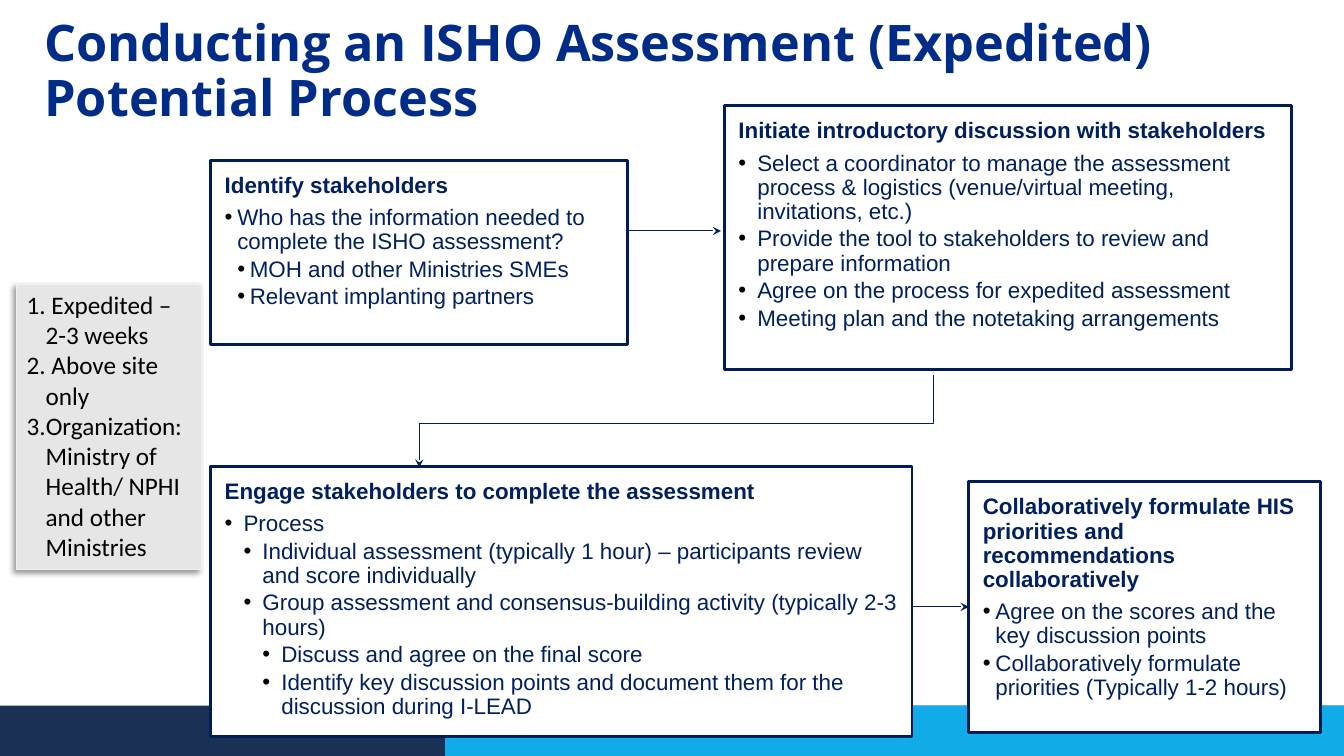
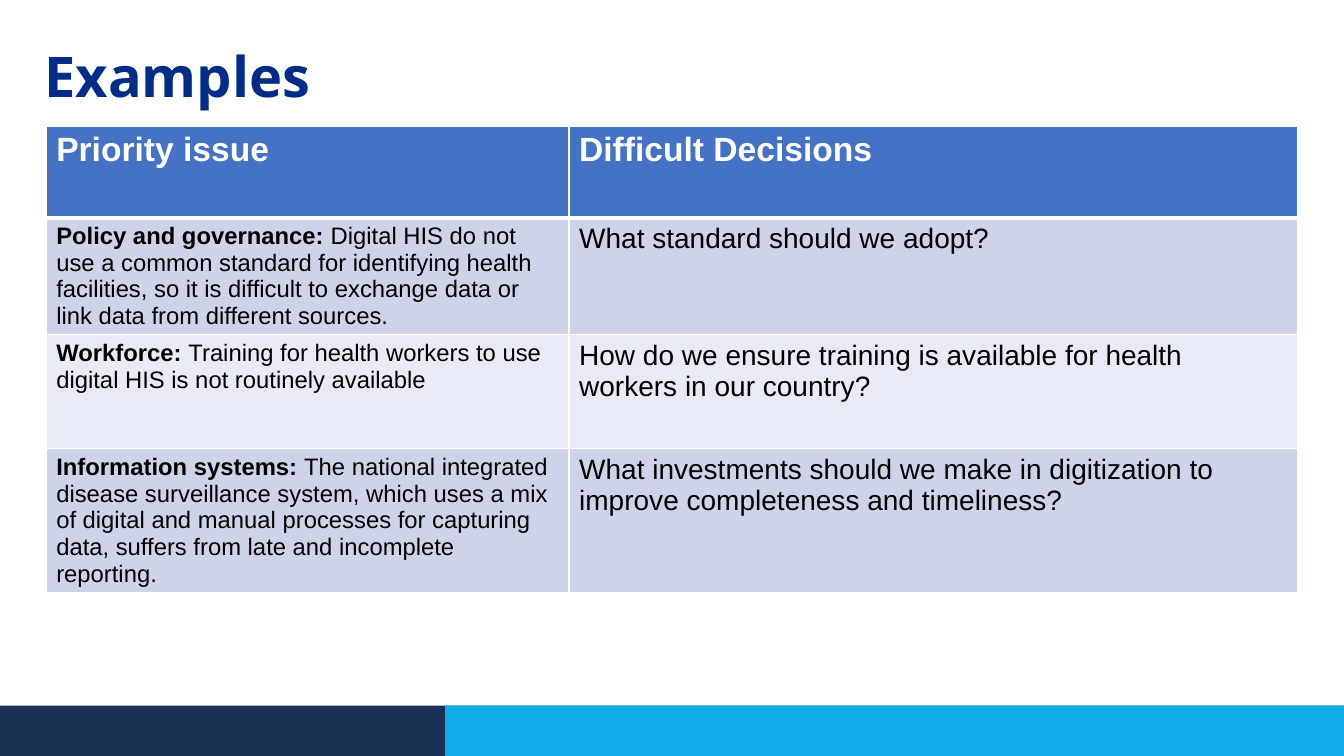
from lxml.etree import SubElement
from pptx import Presentation
from pptx.dml.color import RGBColor
from pptx.enum.shapes import MSO_CONNECTOR, MSO_SHAPE
from pptx.enum.text import MSO_ANCHOR, MSO_AUTO_SIZE, PP_ALIGN
from pptx.oxml.ns import qn
from pptx.util import Pt

WIDE, HIGH = 960, 540
BAND = 36
NAVY, SKY, TITLE = "1B3055", "11ABE9", "002C89"
EDGE, ARROW, INK = "001C56", "001E5F", "002060"
BLACK, WHITE = "000000", "FFFFFF"
HEAD, ODD, EVEN = "4472C4", "CDD4EA", "E8EBF5"

# Each step: box, indent per level, heading, then (level, text) items
STEPS = {
    "identify": ((150.5, 114.5, 298, 131.5), 9, "Identify stakeholders", [
        (1, "Who has the information needed to complete the ISHO assessment?"),
        (2, "MOH and other Ministries SMEs"),
        (2, "Relevant implanting partners")]),
    "initiate": ((517.5, 75.5, 405, 188.5), 13.5,
                 "Initiate introductory discussion with stakeholders", [
        (1, "Select a coordinator to manage the assessment process & logistics "
            "(venue/virtual meeting, invitations, etc.)"),
        (1, "Provide the tool to stakeholders to review and prepare information"),
        (1, "Agree on the process for expedited assessment"),
        (1, "Meeting plan and the notetaking arrangements")]),
    "engage": ((150.5, 333, 501, 193), 13.5,
               "Engage stakeholders to complete the assessment", [
        (1, "Process"),
        (2, "Individual assessment (typically 1 hour) – participants review "
            "and score individually"),
        (2, "Group assessment and consensus-building activity "
            "(typically 2-3 hours)"),
        (3, "Discuss and agree on the final score"),
        (3, "Identify key discussion points and document them for the "
            "discussion during I-LEAD")]),
    "agree": ((692, 344, 251, 179), 9,
              "Collaboratively formulate HIS priorities and recommendations "
              "collaboratively", [
        (1, "Agree on the scores and the key discussion points"),
        (1, "Collaboratively formulate priorities (Typically 1-2 hours)")]),
}

NOTES = [" Expedited – 2-3 weeks", " Above site only",
         "Organization: Ministry of Health/ NPHI and other Ministries"]

# Each issue: row height, topic, detail, decision
ISSUES = [
    (83, "Policy and governance: ",
     "Digital HIS do not use a common standard for identifying health "
     "facilities, so it is difficult to exchange data or link data from "
     "different sources.",
     "What standard should we adopt?"),
    (81.5, "Workforce: ",
     "Training for health workers to use digital HIS is not routinely available",
     "How do we ensure training is available for health workers in our country?"),
    (103, "Information systems: ",
     "The national integrated disease surveillance system, which uses a mix of "
     "digital and manual processes for capturing data, suffers from late and "
     "incomplete reporting.",
     "What investments should we make in digitization to improve completeness "
     "and timeliness?"),
]


def color(code):
    return RGBColor.from_string(code)


def points(values):
    return [Pt(value) for value in values]


def add_run(para, text, size, code, bold=False, face="Arial"):
    run = para.add_run()
    run.text = text
    font = run.font
    font.name, font.size, font.bold = face, Pt(size), bold
    font.color.rgb = color(code)


def next_para(frame):
    """Return the unused first paragraph, or a new one."""
    first = frame.paragraphs[0]
    para = frame.add_paragraph() if first.runs else first
    para.alignment = PP_ALIGN.LEFT
    return para


def set_list(para, level, step, mark, **attrs):
    """Hang the paragraph at its level behind a bullet or number."""
    props = para._p.get_or_add_pPr()
    props.set("marL", str(Pt(level * step)))
    props.set("indent", str(-Pt(step)))
    tint = SubElement(props, qn("a:buClr"))
    SubElement(tint, qn("a:srgbClr"), val=BLACK)
    SubElement(props, qn("a:buFont"), typeface="Arial")
    SubElement(props, qn(mark), **attrs)


def add_box(slide, box, fill, edge=None, width=0.75):
    shape = slide.shapes.add_shape(MSO_SHAPE.RECTANGLE, *points(box))
    shape.shadow.inherit = False
    shape.fill.solid()
    shape.fill.fore_color.rgb = color(fill)
    if edge:
        shape.line.color.rgb = color(edge)
        shape.line.width = Pt(width)
    else:
        shape.line.fill.background()
    return shape


def set_frame(frame, side, top):
    frame.word_wrap = True
    frame.vertical_anchor = MSO_ANCHOR.TOP
    frame.margin_left = frame.margin_right = Pt(side)
    frame.margin_top = frame.margin_bottom = Pt(top)


def add_base(deck, text, box, size):
    """Add a slide with its title and the bottom bands."""
    slide = deck.slides.add_slide(deck.slide_layouts[5])
    title = slide.shapes.title
    title.left, title.top, title.width, title.height = points(box)
    frame = title.text_frame
    set_frame(frame, 7.2, 3.6)
    frame.auto_size = MSO_AUTO_SIZE.NONE
    frame.vertical_anchor = MSO_ANCHOR.BOTTOM
    para = next_para(frame)
    para.line_spacing = 0.9
    add_run(para, text, size, TITLE, True, "Open Sans")
    for left, fill in ((0, NAVY), (318, SKY)):
        add_box(slide, (left, HIGH - BAND, WIDE - left, BAND), fill)
    return slide


def add_step(slide, box, step, head, items):
    shape = add_box(slide, box, WHITE, EDGE, 2)
    frame = shape.text_frame
    set_frame(frame, 10, 10)
    para = next_para(frame)
    para.line_spacing = 0.9
    add_run(para, head, 16, INK, True)
    for index, (level, text) in enumerate(items):
        para = next_para(frame)
        para.line_spacing = 0.9
        para.space_before = Pt(2.4 if index else 5.6)
        set_list(para, level, step, "a:buChar", char="•")
        add_run(para, text, 16, INK)
    return shape


def add_note(slide, box):
    shape = add_box(slide, box, "E7E6E6", "F2F2F2")
    effects = shape.element.spPr.find(qn("a:effectLst"))
    shade = SubElement(effects, qn("a:outerShdw"), blurRad=str(Pt(4)),
                       dist=str(Pt(3)), dir=str(135 * 60000),
                       algn="tr", rotWithShape="0")
    tint = SubElement(shade, qn("a:srgbClr"), val=BLACK)
    SubElement(tint, qn("a:alpha"), val="40000")
    frame = shape.text_frame
    set_frame(frame, 7.2, 3.6)
    for text in NOTES:
        para = next_para(frame)
        set_list(para, 1, 13.5, "a:buAutoNum", type="arabicPeriod")
        add_run(para, text, 18, BLACK, face="Calibri")


def set_arrow(line, props):
    line.color.rgb = color(ARROW)
    line.width = Pt(0.75)
    SubElement(props.find(qn("a:ln")), qn("a:tailEnd"), type="stealth")


def add_arrow(slide, left, right, top):
    arrow = slide.shapes.add_connector(
        MSO_CONNECTOR.STRAIGHT, *points((left, top, right, top)))
    props = arrow.element.spPr
    set_arrow(arrow.line, props)
    SubElement(props, qn("a:effectLst"))
    return arrow


def add_bend(slide, start, *rest):
    """Draw an angled arrow through the given points."""
    pen = slide.shapes.build_freeform(*points(start))
    pen.add_line_segments([points(spot) for spot in rest], close=False)
    shape = pen.convert_to_shape()
    shape.shadow.inherit = False
    shape.fill.background()
    set_arrow(shape.line, shape.element.spPr)


def add_process(deck):
    slide = add_base(
        deck, "Conducting an ISHO Assessment (Expedited) Potential Process",
        (24.5, 21, 814.5, 73.5), 36)
    boxes = {name: add_step(slide, *step) for name, step in STEPS.items()}
    add_arrow(slide, 448.5, 515, 165)
    add_bend(slide, (666.5, 268), (666.5, 302.5), (299.5, 302.5), (299.5, 334))
    arrow = add_arrow(slide, 651.5, 692, 433.5)
    arrow.end_connect(boxes["agree"], 1)
    add_note(slide, (12, 203, 132, 204))


def set_cell(cell, fill, runs, size, code, base=1):
    """Fill a cell; runs are (text, bold) pairs, base is the lower border."""
    cell.fill.solid()
    cell.fill.fore_color.rgb = color(fill)
    props = cell._tc.get_or_add_tcPr()
    for index, side in enumerate("LRTB"):
        width = base if side == "B" else 1
        line = SubElement(props, qn("a:ln" + side), w=str(Pt(width)))
        tint = SubElement(SubElement(line, qn("a:solidFill")), qn("a:srgbClr"))
        tint.set("val", WHITE)
        props.insert(index, line)
    para = next_para(cell.text_frame)
    for text, bold in runs:
        add_run(para, text, size, code, bold)


def add_grid(slide, left, top, widths):
    heights = [65.5] + [issue[0] for issue in ISSUES]
    box = points((left, top, sum(widths), sum(heights)))
    table = slide.shapes.add_table(len(heights), len(widths), *box).table
    for column, width in zip(table.columns, widths):
        column.width = Pt(width)
    for row, height in zip(table.rows, heights):
        row.height = Pt(height)
    for index, text in enumerate(("Priority issue", "Difficult Decisions")):
        set_cell(table.cell(0, index), HEAD, [(text, True)], 24, WHITE, 3)
    for row, (_, topic, detail, choice) in enumerate(ISSUES, 1):
        fill = ODD if row % 2 else EVEN
        set_cell(table.cell(row, 0), fill,
                 [(topic, True), (detail, False)], 17, BLACK)
        set_cell(table.cell(row, 1), fill, [(choice, False)], 20, BLACK)


def add_examples(deck):
    slide = add_base(deck, "Examples", (24.5, 8.5, 740, 73.5), 40)
    add_grid(slide, 33, 90, (373.5, 520.5))


def main():
    deck = Presentation()
    deck.slide_width, deck.slide_height = Pt(WIDE), Pt(HIGH)
    add_process(deck)
    add_examples(deck)
    deck.save("out.pptx")


if __name__ == "__main__":
    main()
